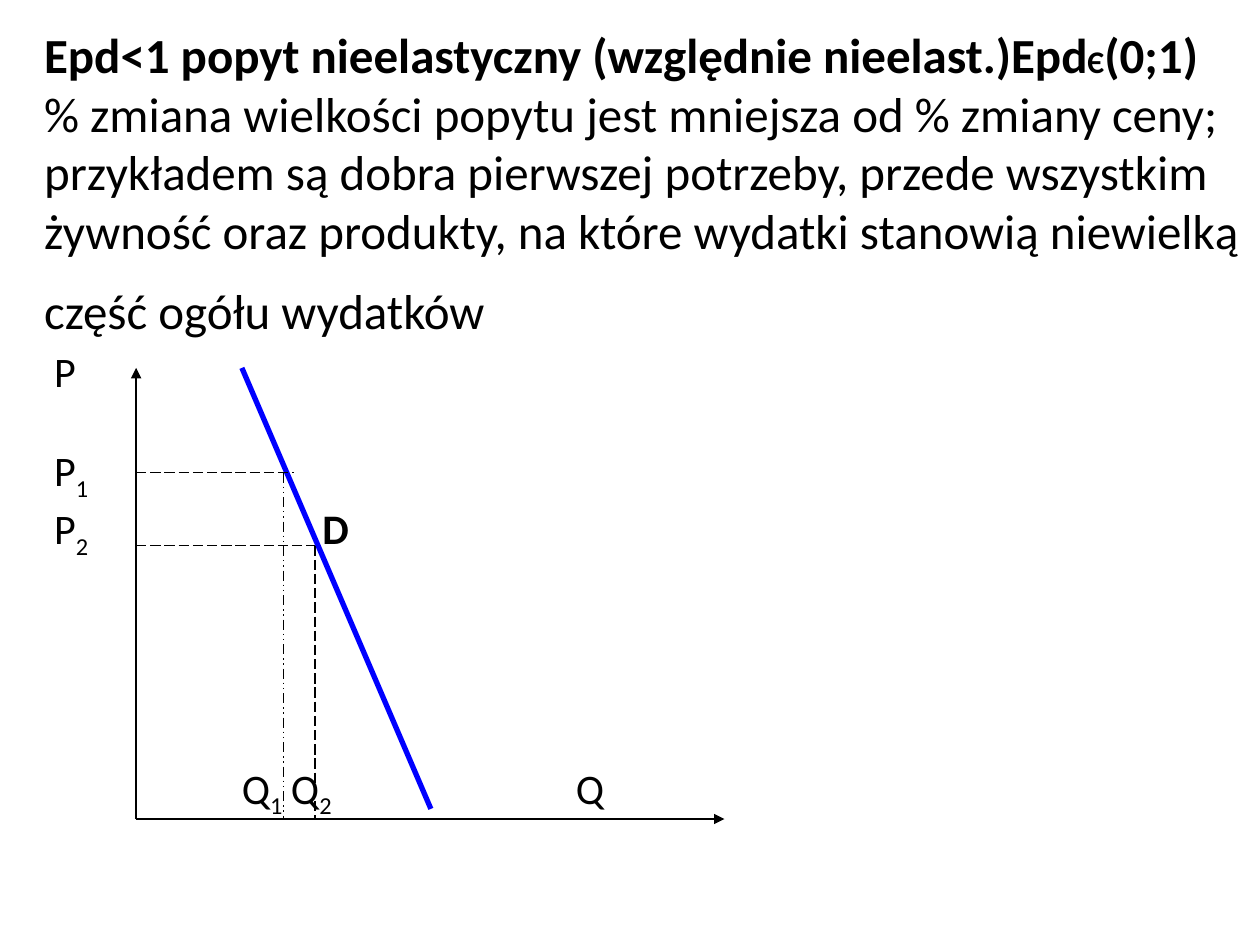
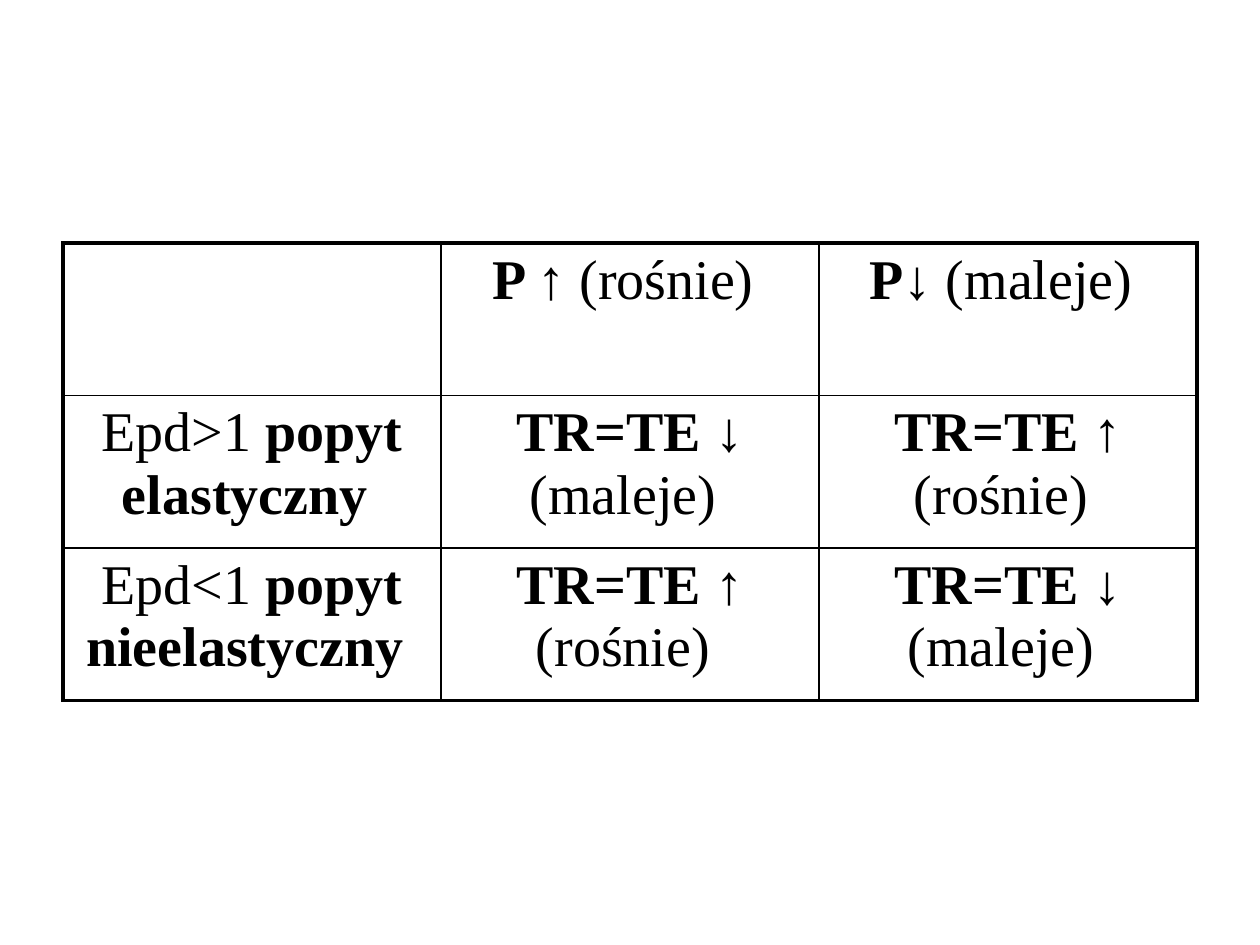
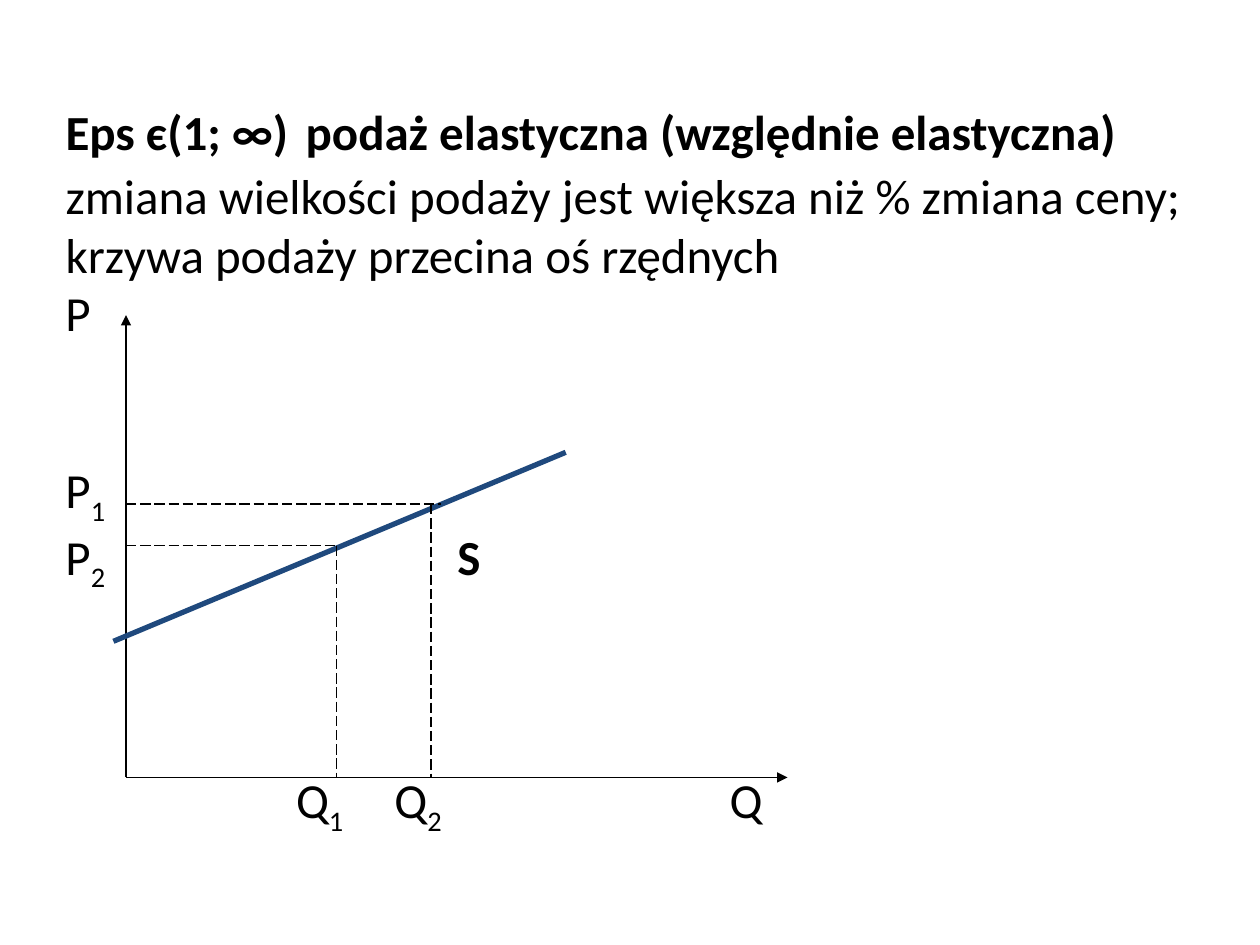
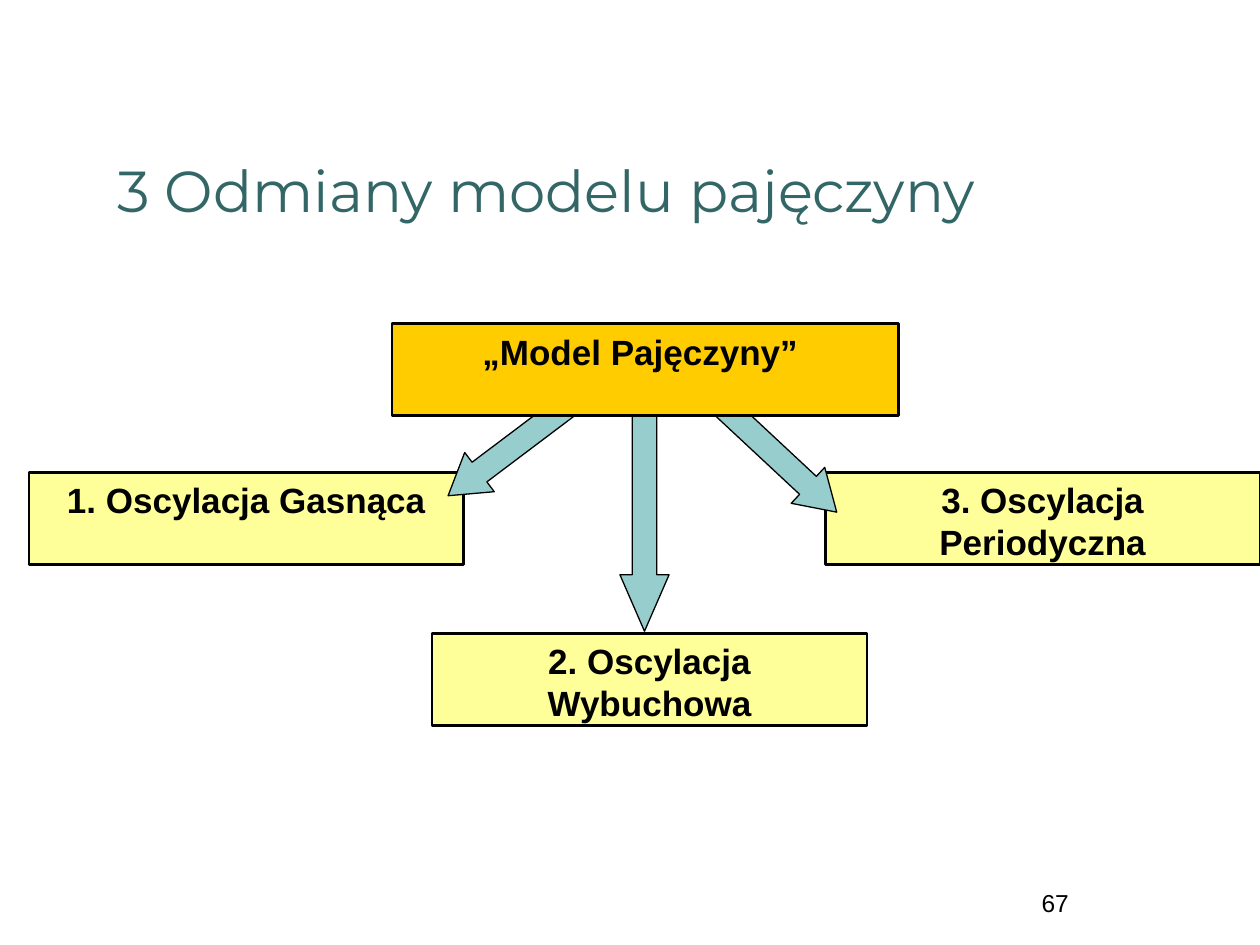
from lxml.etree import SubElement
from pptx import Presentation
from pptx.dml.color import RGBColor
from pptx.enum.dml import MSO_LINE
from pptx.enum.shapes import MSO_CONNECTOR, MSO_SHAPE
from pptx.enum.text import MSO_ANCHOR, MSO_AUTO_SIZE, PP_ALIGN
from pptx.oxml import parse_xml
from pptx.oxml.ns import nsdecls, qn
from pptx.util import Inches, Pt

BLACK = RGBColor(0x00, 0x00, 0x00)
DEMAND_BLUE = RGBColor(0x00, 0x00, 0xFF)
SUPPLY_BLUE = RGBColor(0x1F, 0x49, 0x7D)
TEAL = RGBColor(0x33, 0x66, 0x66)
ARROW_TEAL = RGBColor(0x97, 0xCD, 0xCC)
ORANGE = RGBColor(0xFF, 0xCC, 0x00)
YELLOW = RGBColor(0xFF, 0xFF, 0x99)

TITLE_ONLY_LAYOUT = 5
BLANK_LAYOUT = 6
OUTER_BORDER = 2.21
INNER_BORDER = 0.96


def add_slide(presentation, layout):
    return presentation.slides.add_slide(presentation.slide_layouts[layout])


def set_font(font, name, size, color=BLACK, bold=False):
    font.name = name
    font.size = Pt(size)
    font.color.rgb = color
    font.bold = bold


def add_run(paragraph, text, bold=None, size=None):
    run = paragraph.add_run()
    run.text = text
    if bold is not None:
        run.font.bold = bold
    if size is not None:
        run.font.size = Pt(size)
    return run


def set_title(slide, box, paragraphs, anchor, name="Calibri", size=28, color=BLACK):
    title = slide.shapes.title
    title.left, title.top, title.width, title.height = map(Inches, box)
    frame = title.text_frame
    frame.word_wrap = True
    frame.auto_size = MSO_AUTO_SIZE.NONE
    frame.vertical_anchor = anchor
    for index, runs in enumerate(paragraphs):
        paragraph = frame.add_paragraph() if index else frame.paragraphs[0]
        paragraph.alignment = PP_ALIGN.LEFT
        set_font(paragraph.font, name, size, color)
        for run in runs:
            add_run(paragraph, *run)


def add_label(slide, left, top, text, size, bold=False):
    box = slide.shapes.add_textbox(Inches(left), Inches(top), Inches(0.5), Inches(0.5))
    frame = box.text_frame
    frame.margin_left = frame.margin_right = frame.margin_top = frame.margin_bottom = 0
    paragraph = frame.paragraphs[0]
    set_font(paragraph.font, "Calibri", size, bold=bold)
    add_run(paragraph, text[0])
    if text[1:]:
        subscript = add_run(paragraph, text[1:])
        subscript.font._element.set("baseline", "-25000")


def add_line(slide, start, end, color=BLACK, width=0.75, dash=None, arrow=False):
    points = map(Inches, (*start, *end))
    connector = slide.shapes.add_connector(MSO_CONNECTOR.STRAIGHT, *points)
    connector.line.color.rgb = color
    connector.line.width = Pt(width)
    if dash is not None:
        connector.line.dash_style = dash
    properties = connector._element.spPr
    if arrow:
        SubElement(properties.find(qn("a:ln")), qn("a:tailEnd"), type="triangle")
    SubElement(properties, qn("a:effectLst"))


def add_axes(slide, origin, top, right):
    add_line(slide, origin, (origin[0], top), arrow=True)
    add_line(slide, origin, (right, origin[1]), arrow=True)


def add_guides(slide, origin, price, quantity, price_end, quantity_dash=MSO_LINE.LONG_DASH):
    add_line(slide, (origin[0], price), (price_end, price), dash=MSO_LINE.LONG_DASH)
    add_line(slide, (quantity, price), (quantity, origin[1]), dash=quantity_dash)


def set_borders(cell, left, right, top, bottom):
    properties = cell._tc.get_or_add_tcPr()
    sides = zip("LRTB", (left, right, top, bottom))
    for index, (side, width) in enumerate(sides):
        properties.insert(index, parse_xml(
            f'<a:ln{side} {nsdecls("a")} w="{Pt(width)}"><a:solidFill>'
            f'<a:srgbClr val="{BLACK}"/></a:solidFill></a:ln{side}>'))


def add_bordered_table(slide, rows, left, top, column_width, row_height):
    row_count, column_count = len(rows), len(rows[0])
    frame = slide.shapes.add_table(
        row_count, column_count, Inches(left), Inches(top),
        Inches(column_width * column_count), Inches(row_height * row_count))
    table = frame.table
    table.first_row = table.horz_banding = False
    for row in table.rows:
        row.height = Inches(row_height)

    def border(is_outer):
        return OUTER_BORDER if is_outer else INNER_BORDER

    for row_index, row in enumerate(rows):
        for column_index, runs in enumerate(row):
            cell = table.cell(row_index, column_index)
            cell.fill.background()
            set_borders(cell, border(column_index == 0), border(column_index == column_count - 1),
                        border(row_index == 0), border(row_index == row_count - 1))
            paragraph = cell.text_frame.paragraphs[0]
            paragraph.alignment = PP_ALIGN.CENTER
            set_font(paragraph.font, "Times New Roman", 32)
            for run in runs:
                add_run(paragraph, *run)


def add_filled_shape(slide, kind, left, top, width, height, fill, line_width):
    shape = slide.shapes.add_shape(
        kind, Inches(left), Inches(top), Inches(width), Inches(height))
    shape.shadow.inherit = False
    shape.fill.solid()
    shape.fill.fore_color.rgb = fill
    shape.line.color.rgb = BLACK
    shape.line.width = Pt(line_width)
    return shape


def add_box(slide, left, top, width, text, fill):
    box = add_filled_shape(slide, MSO_SHAPE.RECTANGLE, left, top, width, 0.73, fill, 1.5)
    frame = box.text_frame
    frame.word_wrap = True
    frame.vertical_anchor = MSO_ANCHOR.TOP
    paragraph = frame.paragraphs[0]
    paragraph.text = text
    paragraph.alignment = PP_ALIGN.CENTER
    set_font(paragraph.font, "Arial", 20, bold=True)


def add_block_arrow(slide, left, top, length, rotation, head):
    arrow = add_filled_shape(
        slide, MSO_SHAPE.LEFT_ARROW, left, top, length, 0.39, ARROW_TEAL, 0.75)
    arrow.rotation = rotation
    arrow.adjustments[0] = 0.5
    arrow.adjustments[1] = head


def add_page_number(slide, number):
    box = slide.shapes.add_textbox(Inches(7.5), Inches(7), Inches(1.75), Inches(0.5))
    box.text_frame.word_wrap = True
    paragraph = box.text_frame.paragraphs[0]
    paragraph.text = number
    paragraph.alignment = PP_ALIGN.CENTER
    set_font(paragraph.font, "Arial", 14)


def build_inelastic_demand(presentation):
    slide = add_slide(presentation, TITLE_ONLY_LAYOUT)
    set_title(slide, (0.25, 0, 9.75, 2.92), [
        [("Epd<1 popyt nieelastyczny (względnie nieelast.)Epd", True),
         ("Є", True, 18), ("(0;1)", True)],
        [("% zmiana wielkości popytu jest mniejsza od % zmiany ceny; przykładem są dobra "
          "pierwszej potrzeby, przede wszystkim żywność oraz produkty, na które wydatki "
          "stanowią niewielką część ogółu wydatków",), (" ", True, 40)],
    ], MSO_ANCHOR.MIDDLE)
    for text, left, top in [("P", 0.43, 2.74), ("P1", 0.43, 3.53), ("P2", 0.43, 3.99),
                            ("Q1", 1.92, 6.05), ("Q2", 2.31, 6.05), ("Q", 4.57, 6.05)]:
        add_label(slide, left, top, text, 24)
    add_label(slide, 2.56, 3.99, "D", 24, bold=True)
    origin = (1.08, 6.5)
    add_axes(slide, origin, 2.92, 5.75)
    add_line(slide, (1.92, 2.92), (3.42, 6.42), DEMAND_BLUE, 3)
    add_guides(slide, origin, 3.75, 2.25, 2.33, MSO_LINE.DASH_DOT_DOT)
    add_guides(slide, origin, 4.33, 2.5, 2.5)


def build_revenue_table(presentation):
    slide = add_slide(presentation, BLANK_LAYOUT)
    falls, rises = " (maleje) ", " (rośnie) "
    revenue_falls = [("TR=TE ↓", True), (falls,)]
    revenue_rises = [("TR=TE ↑", True), (rises,)]
    add_bordered_table(slide, [
        [[], [("P ↑", True), (rises,)], [("P↓", True), (falls,)]],
        [[("Epd>1 ",), ("popyt elastyczny ", True)], revenue_falls, revenue_rises],
        [[("Epd<1 ",), ("popyt nieelastyczny ", True)], revenue_rises, revenue_falls],
    ], 0.5, 1.93, 3, 1.21)


def build_elastic_supply(presentation):
    slide = add_slide(presentation, TITLE_ONLY_LAYOUT)
    set_title(slide, (0.42, 0.53, 9.17, 1.8), [
        [("Eps є(1; ∞)", True), (" ", False, 44),
         ("podaż elastyczna (względnie elastyczna)", True)],
        [("zmiana wielkości podaży jest większa niż % zmiana ceny; "
          "krzywa podaży przecina oś rzędnych",)],
    ], MSO_ANCHOR.TOP)
    for text, left, top in [("P", 0.52, 2.24), ("P1", 0.52, 3.65), ("P2", 0.52, 4.18),
                            ("Q1", 2.35, 6.11), ("Q2", 3.13, 6.11), ("Q", 5.79, 6.11)]:
        add_label(slide, left, top, text, 28)
    add_label(slide, 3.63, 4.18, "S", 28, bold=True)
    origin = (1, 6.17)
    add_axes(slide, origin, 2.5, 6.25)
    add_line(slide, (0.9, 5.09), (4.49, 3.59), SUPPLY_BLUE, 3)
    add_guides(slide, origin, 4, 3.42, 3.5)
    add_guides(slide, origin, 4.33, 2.67, 2.67)


def build_cobweb_variants(presentation):
    slide = add_slide(presentation, TITLE_ONLY_LAYOUT)
    set_title(slide, (0.83, 0.58, 8.42, 1.25), [[("3 Odmiany modelu pajęczyny",)]],
              MSO_ANCHOR.BOTTOM, "Montserrat", 33, TEAL)
    for left, top, text in [(0.23, 3.75, "1. Oscylacja Gasnąca"),
                            (3.43, 5.03, "2. Oscylacja Wybuchowa"),
                            (6.55, 3.75, "3. Oscylacja Periodyczna")]:
        add_box(slide, left, top, 3.45, text, YELLOW)
    for arrow in [(3.43, 3.36, 1.26, 323, 0.8), (4.21, 3.91, 1.81, 270, 1.15),
                  (5.55, 3.44, 1.26, 223, 0.8)]:
        add_block_arrow(slide, *arrow)
    add_box(slide, 3.11, 2.57, 4.02, "„Model Pajęczyny” ", ORANGE)
    add_page_number(slide, "67")


def main():
    presentation = Presentation()
    presentation.slide_width = Inches(10)
    presentation.slide_height = Inches(7.5)
    build_inelastic_demand(presentation)
    build_revenue_table(presentation)
    build_elastic_supply(presentation)
    build_cobweb_variants(presentation)
    presentation.save("out.pptx")


if __name__ == "__main__":
    main()
